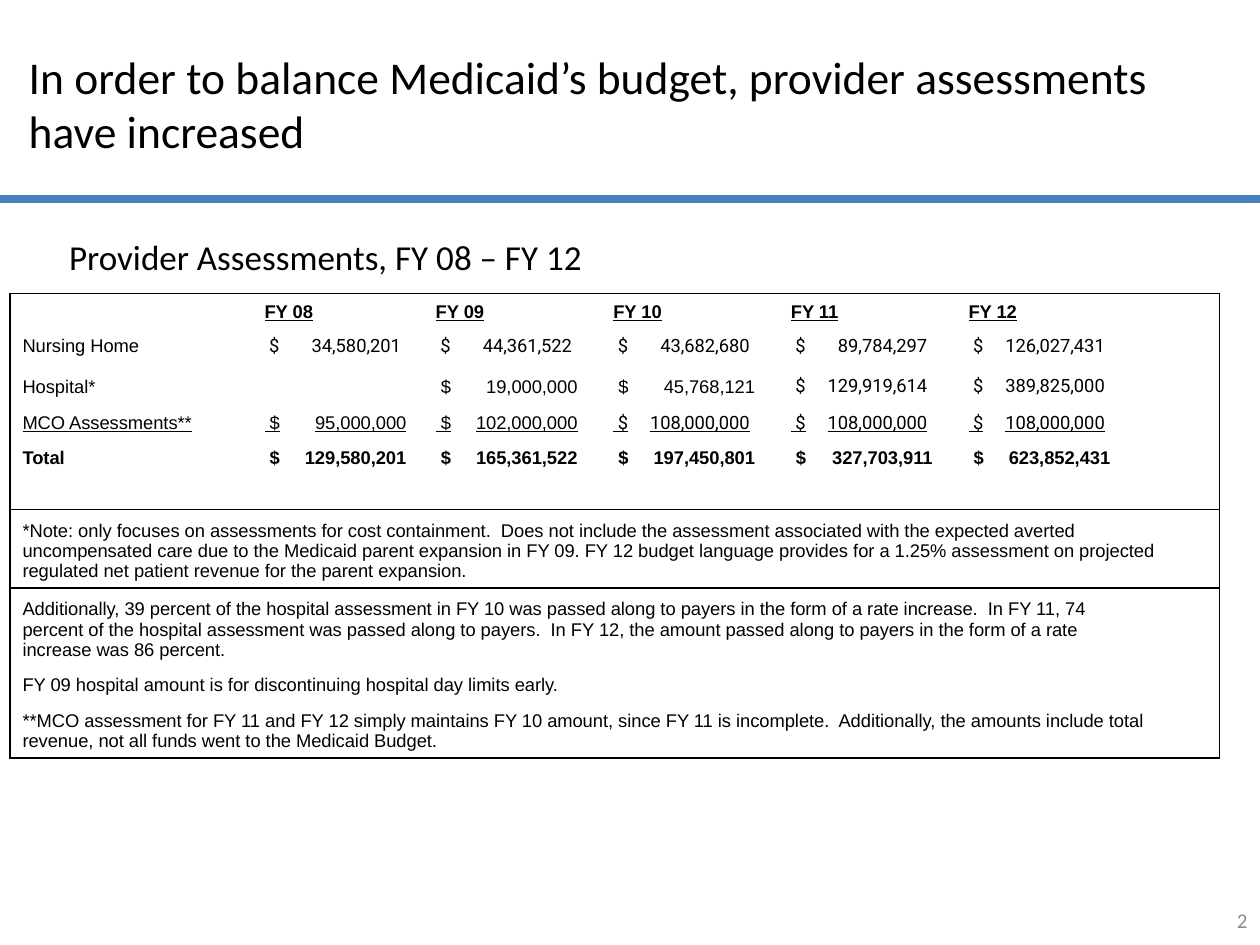
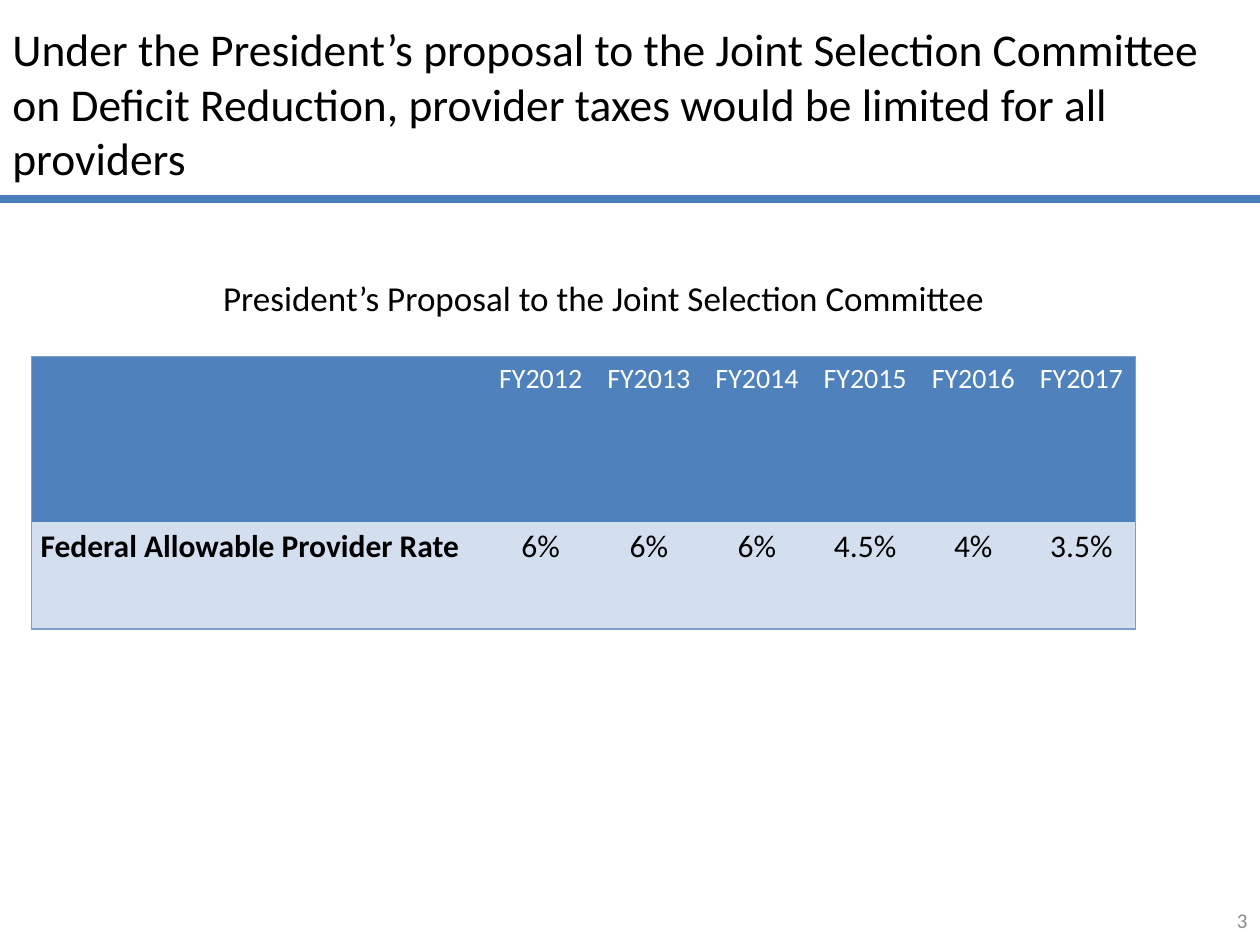
"""Two slides on Medicaid provider assessments, each with a title, a rule and a table."""
from lxml import etree
from pptx import Presentation
from pptx.dml.color import RGBColor
from pptx.enum.shapes import MSO_CONNECTOR
from pptx.enum.text import MSO_ANCHOR, PP_ALIGN
from pptx.oxml.ns import qn
from pptx.util import Cm, Pt

STRAIGHT = MSO_CONNECTOR.STRAIGHT
MIDDLE, BOTTOM, TOP = MSO_ANCHOR.MIDDLE, MSO_ANCHOR.BOTTOM, MSO_ANCHOR.TOP
LEFT, CENTER, RIGHT = PP_ALIGN.LEFT, PP_ALIGN.CENTER, PP_ALIGN.RIGHT

BLACK = RGBColor(0x00, 0x00, 0x00)
WHITE = RGBColor(0xFF, 0xFF, 0xFF)
GREY = RGBColor(0x8C, 0x8C, 0x8C)
RULE_BLUE = RGBColor(0x4B, 0x7E, 0xBC)
HEAD_BLUE = RGBColor(0x4F, 0x81, 0xBD)
PALE_BLUE = RGBColor(0xD3, 0xDF, 0xEE)
EDGE_BLUE = RGBColor(0x7B, 0xA0, 0xCD)

PLAIN_TABLE = "{2D5ABB26-0587-4C30-8999-92F81FD0307C}"
AMOUNT_TABS = {"Roboto": Cm(2.75), "Arial": Cm(2.86)}

YEARS = ["FY 08", "FY 09", "FY 10", "FY 11", "FY 12"]
ASSESSMENTS = [
    ("Nursing Home", 0, {},
     ["34,580,201", "44,361,522", "43,682,680", "89,784,297", "126,027,431"]),
    ("Hospital*", 3, {},
     ["", "19,000,000", "45,768,121", "129,919,614", "389,825,000"]),
    ("MCO Assessments**", 2, {"underline": True},
     ["95,000,000", "102,000,000", "108,000,000", "108,000,000", "108,000,000"]),
    ("Total", 5, {"bold": True},
     ["129,580,201", "165,361,522", "197,450,801", "327,703,911", "623,852,431"]),
]
NOTES = [
    ("*Note: only focuses on assessments for cost containment.  Does not include the "
     "assessment associated with the expected averted uncompensated care due to the "
     "Medicaid parent expansion in FY 09. FY 12 budget language provides for a 1.25% "
     "assessment on projected regulated net patient revenue for the parent expansion.", 7),
    ("Additionally, 39 percent of the hospital assessment in FY 10 was passed along to "
     "payers in the form of a rate increase.  In FY 11, 74 percent of the hospital "
     "assessment was passed along to payers.  In FY 12, the amount passed along to payers "
     "in the form of a rate increase was 86 percent.", 6),
    ("FY 09 hospital amount is for discontinuing hospital day limits early.", 7),
    ("**MCO assessment for FY 11 and FY 12 simply maintains FY 10 amount, since FY 11 is "
     "incomplete.  Additionally, the amounts include total revenue, not all funds went to "
     "the Medicaid Budget.", 7),
]
RATES = {"FY2012": "6%", "FY2013": "6%", "FY2014": "6%",
         "FY2015": "4.5%", "FY2016": "4%", "FY2017": "3.5%"}


class Deck:
    """Holds the shared style and the current slide."""

    def __init__(self):
        self.prs = Presentation()
        self.prs.slide_width, self.prs.slide_height = Cm(25.4), Cm(19.05)
        self.s = None

    def fill_paragraph(self, p, text, size, align=LEFT, color=BLACK, font="Calibri", **fmt):
        p.alignment = align
        if not text:
            p._p.get_or_add_endParaRPr().set("sz", str(int(size * 100)))
            return
        r = p.add_run()
        r.text = text
        r.font.color.rgb = color
        for name, value in {"size": Pt(size), "name": font, **fmt}.items():
            setattr(r.font, name, value)

    def text(self, box, text, size, inset=0.25, **fmt):
        sp = self.s.shapes.add_textbox(*map(Cm, box))
        tf = sp.text_frame
        for name, value in {"word_wrap": True, "vertical_anchor": MIDDLE,
                            "margin_left": Cm(inset)}.items():
            setattr(tf, name, value)
        self.fill_paragraph(tf.paragraphs[0], text, size, **fmt)

    def rule(self, y):
        sp = self.s.shapes.add_connector(STRAIGHT, 0, Cm(y), self.prs.slide_width, Cm(y))
        sp.line.color.rgb, sp.line.width = RULE_BLUE, Pt(4.5)
        etree.SubElement(sp._element.spPr, qn("a:effectLst"))

    def slide(self, number, title, title_left, title_width, inset=0.25):
        self.s = self.prs.slides.add_slide(self.prs.slide_layouts[6])
        self.text((19.48, 18.03, 5.92, 1.02), number, 12, align=RIGHT, color=GREY)
        self.rule(4.01)
        self.text((title_left, 1.19, title_width, 1.78), title, 26, inset)

    def table(self, left, top, cols, rows):
        sp = self.s.shapes.add_table(len(rows), len(cols), Cm(left), Cm(top),
                                     Cm(sum(cols)), Cm(sum(rows)))
        table = sp.table
        table.first_row = table.horz_banding = False
        table._tbl.tblPr.find(qn("a:tableStyleId")).text = PLAIN_TABLE
        for items, name, sizes in ((table.columns, "width", cols),
                                   (table.rows, "height", rows)):
            for item, size in zip(items, sizes):
                setattr(item, name, Cm(size))
        return table

    def cell(self, cell, text, size, fill=WHITE, tab=None, spacing=None, layout=None, **fmt):
        cell.fill.solid()
        cell.fill.fore_color.rgb = fill
        for name, value in (layout or {"vertical_anchor": BOTTOM}).items():
            setattr(cell, name, value)
        p = cell.text_frame.paragraphs[0]
        if spacing:
            p.line_spacing = spacing
        self.fill_paragraph(p, text, size, **fmt)
        if tab:
            tabs = etree.SubElement(p._p.get_or_add_pPr(), qn("a:tabLst"))
            etree.SubElement(tabs, qn("a:tab"), pos=str(tab), algn="r")

    def frame(self, table, first, last, color):
        """Draws a line round a block of whole rows."""
        width = len(table.columns)
        for row in range(first, last + 1):
            for col in range(width):
                cell = table.cell(row, col)
                span = cell.span_width if cell.is_merge_origin else 1
                sides = {"lnL": col == 0, "lnR": col + span == width,
                         "lnT": row == first, "lnB": row == last}
                edges = [side for side, on in sides.items() if on]
                for place, side in enumerate(edges):
                    ln = etree.Element(qn(f"a:{side}"), w=str(Pt(1)))
                    fill = etree.SubElement(ln, qn("a:solidFill"))
                    etree.SubElement(fill, qn("a:srgbClr"), val=str(color))
                    cell._tc.get_or_add_tcPr().insert(place, ln)


def assessments_slide(deck):
    deck.slide("2", "In order to balance Medicaid’s budget, provider assessments "
               "have increased", -0.64, 25.2, inset=1.22)
    deck.text((-1.27, 3.12, 15.67, 4.09), "Provider Assessments, FY 08 – FY 12", 20,
              align=CENTER)
    table = deck.table(0.2, 5.92, [4.88, 3.45, 3.58, 3.58, 3.58, 3.56, 1.75],
                       [0.69, 0.69, 0.81, 0.74, 0.69, 0.69, 1.37, 1.5, 0.64, 1.12])
    filled = {}
    for col, year in enumerate(YEARS, 1):
        filled[0, col] = year, {"bold": True, "underline": True}
    for row, (label, arial_years, fmt, amounts) in enumerate(ASSESSMENTS, 1):
        filled[row, 0] = label, fmt
        for col, amount in enumerate(amounts, 1):
            font = "Arial" if col <= arial_years else "Roboto"
            if amount:
                filled[row, col] = (f" $\t{amount}",
                                    {**fmt, "font": font, "tab": AMOUNT_TABS[font]})
    for row, (note, span) in enumerate(NOTES, 6):
        table.cell(row, 0).merge(table.cell(row, span - 1))
        filled[row, 0] = note, {}
    for row in range(len(table.rows)):
        for col in range(len(table.columns)):
            text, fmt = filled.get((row, col), ("", {}))
            deck.cell(table.cell(row, col), text, 10.5, **{"font": "Arial", **fmt})
    deck.frame(table, 0, 5, BLACK)
    deck.frame(table, 6, 9, BLACK)


def proposal_slide(deck):
    deck.slide("3", "Under the President’s proposal to the Joint Selection Committee on "
               "Deficit Reduction, provider taxes would be limited for all providers",
               0, 24.56)
    table = deck.table(0.64, 7.19, [9.17] + [2.18] * len(RATES), [3.33, 2.16])
    layout = {"vertical_anchor": TOP, "margin_left": Cm(0.18), "margin_right": Cm(0.18),
              "margin_top": 0, "margin_bottom": 0}
    head = {"size": 16, "fill": HEAD_BLUE, "color": WHITE}
    body = {"size": 18, "fill": PALE_BLUE}
    shared = {"layout": layout, "spacing": 1.15}
    columns = [("", "Federal Allowable Provider Rate"), *RATES.items()]
    for col, texts in enumerate(columns):
        for row, (text, fmt) in enumerate(zip(texts, (head, body))):
            deck.cell(table.cell(row, col), text, align=CENTER if col else LEFT,
                      bold=col == 0, **fmt, **shared)
    deck.frame(table, 0, 1, EDGE_BLUE)
    deck.text((0.64, 3.96, 23.06, 4.09),
              "President’s Proposal to the Joint Selection Committee", 20, align=CENTER)


def main():
    deck = Deck()
    assessments_slide(deck)
    proposal_slide(deck)
    deck.prs.save("out.pptx")


if __name__ == "__main__":
    main()
